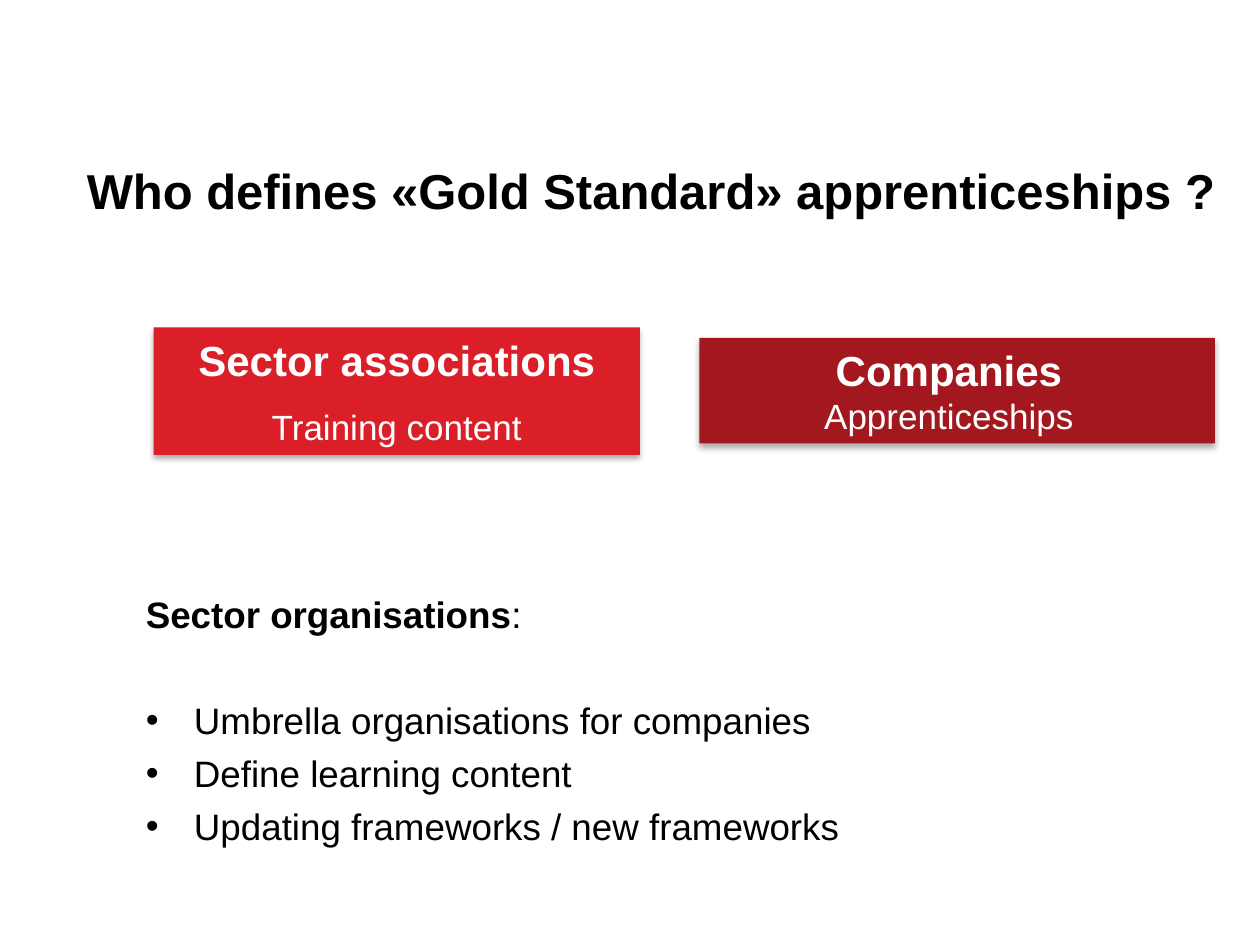
"""Build the slide on who defines Gold Standard apprenticeships."""
from dataclasses import dataclass

from lxml import etree
from pptx import Presentation
from pptx import util as u
from pptx.dml.color import RGBColor
from pptx.enum import shapes, text
from pptx.oxml.ns import qn


@dataclass(frozen=True)
class Theme:
    font: str = "Arial"
    ink: str = "000000"
    paper: str = "FFFFFF"
    red: str = "DA1F28"
    dark_red: str = "A3171E"
    title: float = 28
    heading: float = 24
    detail: float = 20
    body: float = 21


@dataclass(frozen=True)
class Area:
    left: float
    top: float
    width: float
    height: float

    def lengths(self) -> tuple:
        return tuple(u.Cm(n) for n in (self.left, self.top, self.width, self.height))


@dataclass(frozen=True)
class Card:
    area: Area
    fill: str
    heading: str
    detail: str
    gap: float = 0
    right_inset: float = 0.25


THEME = Theme()
TITLE_AREA = Area(1.5, 3.12, 23.6, 2.67)
BODY_AREA = Area(2.69, 10.72, 21.79, 6.6)
BODY_TOP_INSET = 1.19
BULLET_INDENT = u.Cm(0.97)
LINE_PITCH = 26
BODY_GAP = 4.2
CARDS = [
    Card(Area(3.1, 6.6, 9.8, 2.57), THEME.red,
         "Sector associations", "Training content", gap=12),
    Card(Area(14.1, 6.81, 10.39, 2.13), THEME.dark_red,
         "Companies", "Apprenticeships", right_inset=0.58),
]
BULLETS = [
    "Umbrella organisations for companies",
    "Define learning content",
    "Updating frameworks / new frameworks",
]


def style(para, size: float, color: str, bold: bool = False) -> None:
    font = para.font
    font.name, font.size, font.bold = THEME.font, u.Pt(size), bold
    font.color.rgb = RGBColor.from_string(color)


def add_box(page, area: Area):
    frame = page.shapes.add_textbox(*area.lengths()).text_frame
    frame.word_wrap = True
    return frame


def add_shadow(shape) -> None:
    shape.shadow.inherit = False
    effects = shape._element.spPr.find(qn("a:effectLst"))
    shadow = etree.SubElement(
        effects, qn("a:outerShdw"), blurRad=str(u.Pt(3.5)), dist=str(u.Pt(2.2)),
        dir="5400000", algn="t", rotWithShape="0")
    color = etree.SubElement(shadow, qn("a:srgbClr"), val=THEME.ink)
    etree.SubElement(color, qn("a:alpha"), val="32000")


def add_bullet(para) -> None:
    props = para._p.get_or_add_pPr()
    props.set("marL", str(BULLET_INDENT))
    props.set("indent", str(-BULLET_INDENT))
    etree.SubElement(props, qn("a:buFont"), typeface=THEME.font)
    etree.SubElement(props, qn("a:buChar"), char="•")


def add_title(page) -> None:
    para = add_box(page, TITLE_AREA).paragraphs[0]
    para.text = "Who defines «Gold Standard» apprenticeships ?"
    style(para, THEME.title, THEME.ink, bold=True)


def add_body(page) -> None:
    frame = add_box(page, BODY_AREA)
    frame.margin_top = u.Cm(BODY_TOP_INSET)
    lead = frame.paragraphs[0]
    lead.line_spacing = u.Pt(LINE_PITCH)
    style(lead, THEME.body, THEME.ink)
    span = lead.add_run()
    span.text, span.font.bold = "Sector organisations", True
    lead.add_run().text = ":"
    for index, line in enumerate(BULLETS):
        para = frame.add_paragraph()
        para.text = line
        para.line_spacing = u.Pt(LINE_PITCH)
        skipped = LINE_PITCH + BODY_GAP if index == 0 else 0
        para.space_before = u.Pt(BODY_GAP + skipped)
        add_bullet(para)
        style(para, THEME.body, THEME.ink)


def add_card(page, card: Card) -> None:
    box = page.shapes.add_shape(shapes.MSO_SHAPE.RECTANGLE, *card.area.lengths())
    box.fill.solid()
    box.fill.fore_color.rgb = RGBColor.from_string(card.fill)
    box.line.fill.background()
    add_shadow(box)
    frame = box.text_frame
    frame.word_wrap = True
    frame.vertical_anchor = text.MSO_ANCHOR.MIDDLE
    frame.margin_right = u.Cm(card.right_inset)
    heading, detail = frame.paragraphs[0], frame.add_paragraph()
    heading.text, detail.text = card.heading, card.detail
    detail.space_before = u.Pt(card.gap)
    style(heading, THEME.heading, THEME.paper, bold=True)
    style(detail, THEME.detail, THEME.paper)
    for para in (heading, detail):
        para.alignment = text.PP_ALIGN.CENTER


def main() -> None:
    deck = Presentation()
    deck.slide_width, deck.slide_height = u.Cm(25.4), u.Cm(19.05)
    page = deck.slides.add_slide(deck.slide_layouts[6])
    add_title(page)
    add_body(page)
    for card in CARDS:
        add_card(page, card)
    deck.save("out.pptx")


if __name__ == "__main__":
    main()
